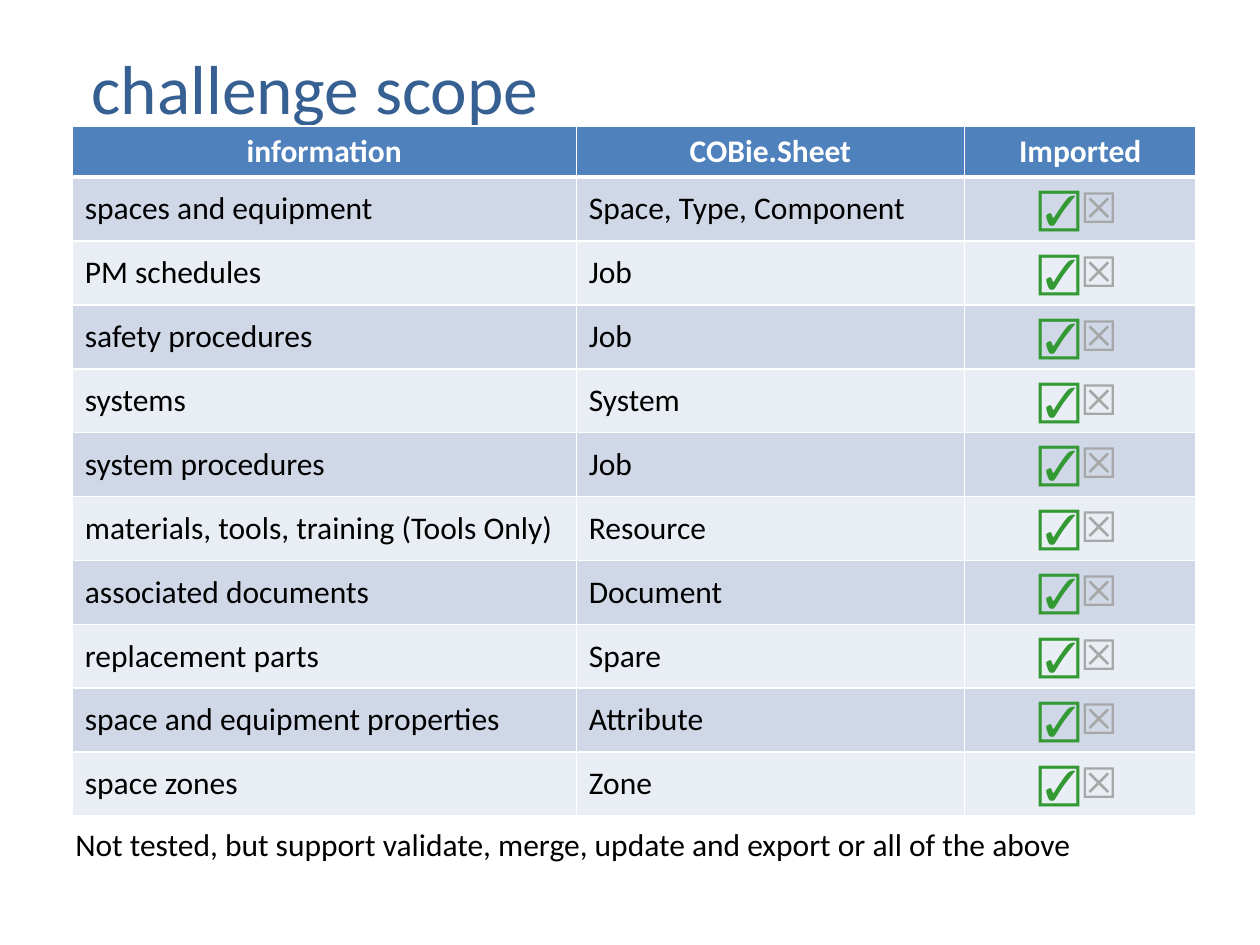
import pptx
import pptx.dml.color
import pptx.enum.text
import pptx.oxml
import pptx.oxml.ns
import pptx.util

Pt = pptx.util.Pt
ALIGN = pptx.enum.text.PP_ALIGN
MIDDLE = pptx.enum.text.MSO_ANCHOR.MIDDLE

TITLE = "challenge scope"
HEADINGS = ["information", "COBie.Sheet", "Imported"]
SCOPE = [
    ("spaces and equipment", "Space, Type, Component"),
    ("PM schedules", "Job"),
    ("safety procedures", "Job"),
    ("systems", "System"),
    ("system procedures", "Job"),
    ("materials, tools, training (Tools Only)", "Resource"),
    ("associated documents", "Document"),
    ("replacement parts", "Spare"),
    ("space and equipment properties", "Attribute"),
    ("space zones", "Zone"),
]
NOTE = "Not tested, but support validate, merge, update and export or all of the above"
COLORS = {
    "title": "376092", "header": "4F81BD", "odd": "D0D8E8", "even": "E9EDF4",
    "white": "FFFFFF", "text": "000000", "yes": "339933", "no": "A6A6A6",
}
MARKS = [("☑", "yes"), ("☒", "no")]
COLUMN_WIDTHS = [288, 222, 132]
HEADER_HEIGHT, ROW_HEIGHT = 29.2, 36.5


def rgb(name):
    """Return the named colour."""
    return pptx.dml.color.RGBColor.from_string(COLORS[name])


def add_span(para, text, size, color, bold=False):
    """Add one formatted run to a paragraph."""
    span = para.add_run()
    span.text = text
    span.font.name = "Calibri"
    span.font.size = Pt(size)
    span.font.bold = bold
    span.font.color.rgb = rgb(color)


def style_cell(cell, fill, bottom_width=1):
    """Give a cell white borders, a fill and middle anchoring."""
    properties = cell._tc.get_or_add_tcPr()
    for side in ("L", "R", "T", "B"):
        width = Pt(bottom_width if side == "B" else 1)
        properties.append(pptx.oxml.parse_xml(
            f'<a:ln{side} {pptx.oxml.ns.nsdecls("a")} w="{width}"><a:solidFill>'
            f'<a:srgbClr val="{COLORS["white"]}"/></a:solidFill></a:ln{side}>'))
    cell.fill.solid()
    cell.fill.fore_color.rgb = rgb(fill)
    cell.vertical_anchor = MIDDLE


def add_title(page):
    """Place the title in its placeholder."""
    title = page.shapes.title
    title.left, title.top, title.width, title.height = Pt(36), Pt(21.6), Pt(648), Pt(56)
    title.text_frame.margin_left = Pt(16.3)
    title.text_frame.vertical_anchor = MIDDLE
    para = title.text_frame.paragraphs[0]
    para.alignment = ALIGN.LEFT
    add_span(para, TITLE, 39.6, "title")


def add_scope_table(page):
    """Build the table of information, sheets and import marks."""
    height = HEADER_HEIGHT + ROW_HEIGHT * len(SCOPE)
    table = page.shapes.add_table(
        len(SCOPE) + 1, len(HEADINGS), Pt(41.3), Pt(72),
        Pt(sum(COLUMN_WIDTHS)), Pt(height)).table
    for column, width in zip(table.columns, COLUMN_WIDTHS):
        column.width = Pt(width)
    table.rows[0].height = Pt(HEADER_HEIGHT)
    for cell, heading in zip(table.rows[0].cells, HEADINGS):
        style_cell(cell, "header", bottom_width=3)
        para = cell.text_frame.paragraphs[0]
        para.alignment = ALIGN.CENTER
        add_span(para, heading, 18, "white", bold=True)
    for index, texts in enumerate(SCOPE, start=1):
        row = table.rows[index]
        row.height = Pt(ROW_HEIGHT)
        for cell in row.cells:
            style_cell(cell, "odd" if index % 2 else "even")
        for cell, text in zip(row.cells, texts):
            add_span(cell.text_frame.paragraphs[0], text, 18, "text")
        para = table.cell(index, 2).text_frame.paragraphs[0]
        para.alignment = ALIGN.CENTER
        for mark, color in MARKS:
            add_span(para, mark, 24, color, bold=True)


def add_note(page):
    """Add the closing remark under the table."""
    box = page.shapes.add_textbox(Pt(36), Pt(467.7), Pt(618), Pt(30))
    box.text_frame.word_wrap = True
    add_span(box.text_frame.paragraphs[0], NOTE, 18, "text")


def main():
    """Build and save the challenge scope slide."""
    deck = pptx.Presentation()
    deck.slide_width, deck.slide_height = Pt(720), Pt(540)
    page = deck.slides.add_slide(deck.slide_layouts[5])
    add_title(page)
    add_scope_table(page)
    add_note(page)
    deck.save("out.pptx")


if __name__ == "__main__":
    main()
